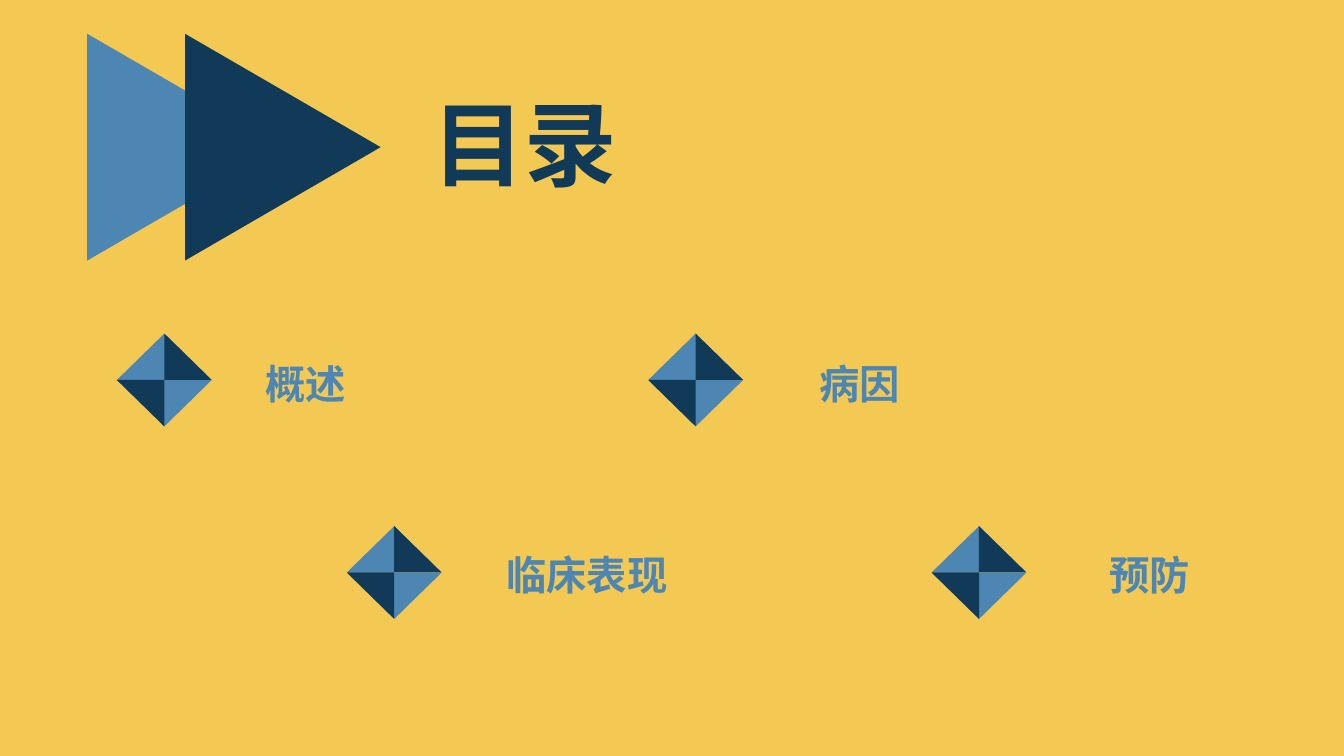
from lxml import etree
from pptx import Presentation
from pptx.dml.color import RGBColor
from pptx.enum import shapes, text
from pptx.oxml.ns import qn
from pptx.util import Inches, Pt

COLORS = {"yellow": "F3C953", "blue": "4D86B3", "navy": "113A59"}
FONT = "Noto Sans CJK SC"
HEADING = "目录"
ARROWS = [(0.71, "blue"), (1.68, "navy")]
# Label, diamond left, diamond top, label left, label top, label width
TOPICS = [
    ("概述", 1.16, 3.31, 2.45, 3.41, 1.16),
    ("临床表现", 3.44, 5.22, 4.74, 5.3, 2.16),
    ("病因", 6.43, 3.31, 7.95, 3.41, 1.16),
    ("预防", 9.24, 5.22, 10.82, 5.3, 1.16),
]
HALF_W, HALF_H = 0.47, 0.46
LABEL_H = 0.71


def rgb(color):
    return RGBColor.from_string(COLORS[color])


def paint(shape, color):
    shape.shadow.inherit = False
    shape.fill.solid()
    shape.fill.fore_color.rgb = rgb(color)
    shape.line.fill.background()


def add_triangle(parent, left, top, width, height, color, rotation=0):
    triangle = parent.add_shape(
        shapes.MSO_SHAPE.ISOSCELES_TRIANGLE,
        Inches(left), Inches(top), Inches(width), Inches(height))
    triangle.rotation = rotation
    paint(triangle, color)


def add_facet(parent, points, color):
    corners = [(Inches(x), Inches(y)) for x, y in points]
    builder = parent.build_freeform(*corners[0])
    builder.add_line_segments(corners[1:], close=True)
    paint(builder.convert_to_shape(), color)


def write(frame, words, size, color, align):
    paragraph = frame.paragraphs[0]
    paragraph.alignment = align
    run = paragraph.add_run()
    run.text = words
    run.font.size = Pt(size)
    run.font.bold = True
    run.font.color.rgb = rgb(color)
    run.font.name = FONT
    properties = run.font._element
    etree.SubElement(properties, qn("a:ea"), typeface=FONT)
    return paragraph, properties


def add_diamond(parent, left, top):
    center_x, center_y = left + HALF_W, top + HALF_H
    # The upper half points up, the lower half points down
    for side, rotation in ((-1, 0), (1, 180)):
        add_triangle(parent, left, min(center_y, center_y + side * HALF_H),
                     2 * HALF_W, HALF_H, "blue", rotation)
        add_facet(parent, [(center_x, center_y + side * HALF_H),
                           (center_x, center_y),
                           (center_x - side * HALF_W, center_y)], "navy")


def add_label(parent, words, left, top, width):
    label = parent.add_textbox(
        Inches(left), Inches(top), Inches(width), Inches(LABEL_H))
    frame = label.text_frame
    frame.word_wrap = False
    frame.vertical_anchor = text.MSO_ANCHOR.MIDDLE
    frame.margin_left = frame.margin_right = Inches(0.08)
    frame.margin_top = frame.margin_bottom = Inches(0.04)
    _, properties = write(frame, words, 36, "blue", text.PP_ALIGN.CENTER)
    properties.set("cap", "small")


def main():
    deck = Presentation()
    deck.slide_width, deck.slide_height = Inches(13.33), Inches(7.5)
    slide = deck.slides.add_slide(deck.slide_layouts[5])
    slide.background.fill.solid()
    slide.background.fill.fore_color.rgb = rgb("yellow")

    # Heading with its two arrowheads
    for left, color in ARROWS:
        add_triangle(slide.shapes, left, 0.49, 2.25, 1.94, color, 90)
    heading = slide.shapes.title
    heading.left, heading.top = Inches(4.19), Inches(0.84)
    heading.width, heading.height = Inches(5.9), Inches(1.28)
    heading.text_frame.auto_size = text.MSO_AUTO_SIZE.NONE
    heading.text_frame.vertical_anchor = text.MSO_ANCHOR.MIDDLE
    line, _ = write(heading.text_frame, HEADING, 66, "navy", text.PP_ALIGN.LEFT)
    line.line_spacing = 0.9

    # Topics
    for words, left, top, label_left, label_top, label_width in TOPICS:
        topic = slide.shapes.add_group_shape().shapes
        add_diamond(topic, left, top)
        add_label(topic, words, label_left, label_top, label_width)

    deck.save("out.pptx")


if __name__ == "__main__":
    main()
